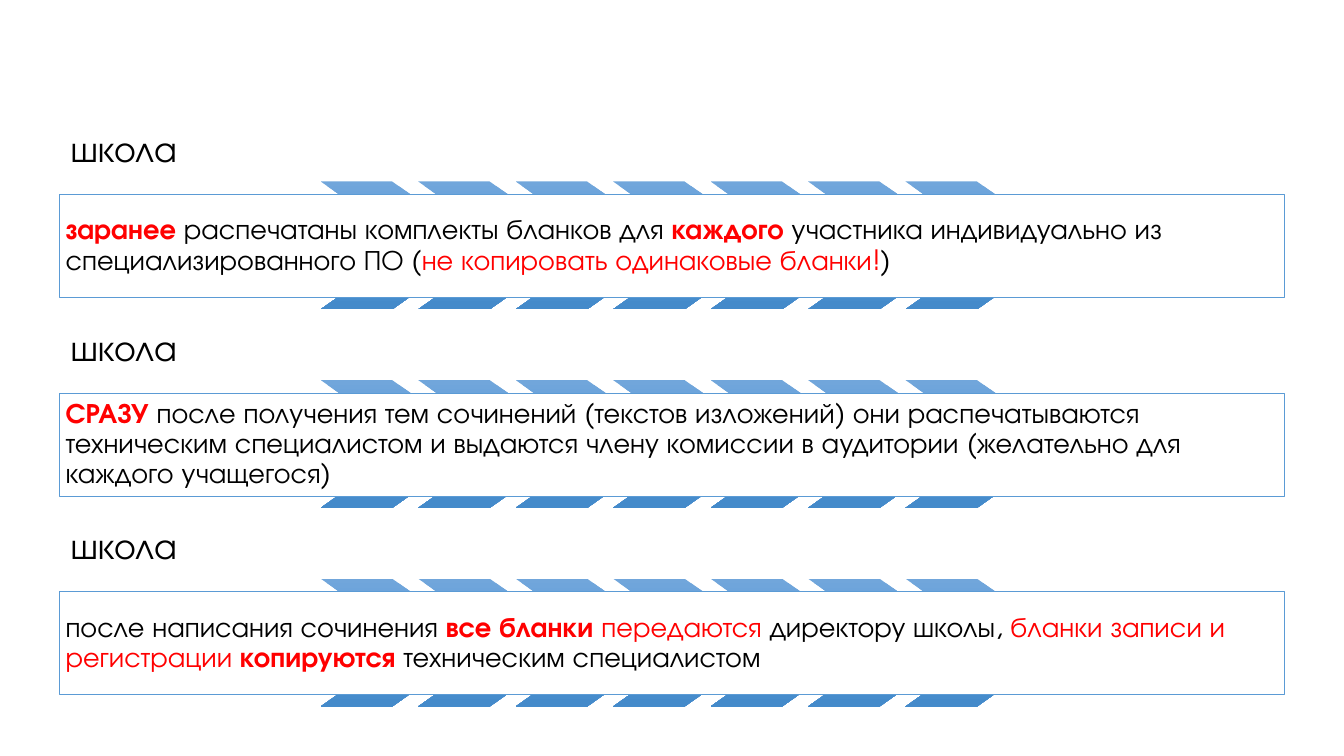
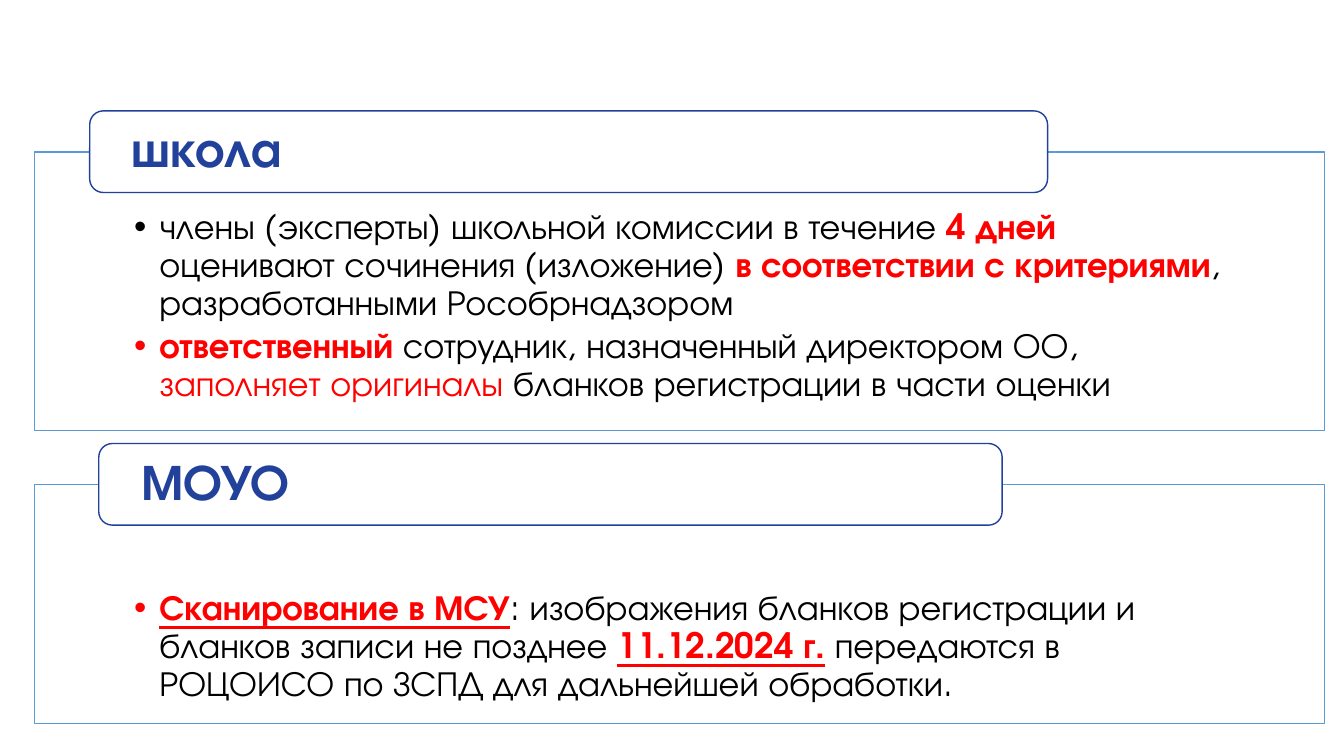
"""Build two slides on how schools handle essay forms before and after the exam."""
from copy import deepcopy

from lxml.etree import SubElement
from pptx import Presentation
from pptx.dml.color import RGBColor
from pptx.enum.shapes import MSO_SHAPE
from pptx.enum.text import MSO_ANCHOR, PP_ALIGN
from pptx.oxml.ns import qn
from pptx.util import Inches, Pt

FONT = "TeX Gyre Adventor"
BLACK = RGBColor(0x00, 0x00, 0x00)
RED = RGBColor(0xFF, 0x00, 0x00)
WHITE = RGBColor(0xFF, 0xFF, 0xFF)
NAVY = RGBColor(0x22, 0x41, 0x9B)
BORDER_BLUE = RGBColor(0x5B, 0x9B, 0xD5)
CHEVRON_BLUES = [
    RGBColor(0x71, 0xA6, 0xDB),
    RGBColor(0x55, 0x9B, 0xDB),
    RGBColor(0x44, 0x8A, 0xCA),
]

PLAIN = (BLACK, False, False)
ACCENT = (RED, False, False)
STRONG = (RED, True, False)
UNDERLINED = (RED, True, True)
HEADING = (NAVY, True, False)


def add_box(slide, kind, left, top, width, height, border, border_width):
    box = slide.shapes.add_shape(
        kind, Inches(left), Inches(top), Inches(width), Inches(height)
    )
    box.shadow.inherit = False
    box.fill.solid()
    box.fill.fore_color.rgb = WHITE
    box.line.color.rgb = border
    box.line.width = Pt(border_width)
    return box


def write_text(shape, paragraphs, size, anchor, insets, bulleted=False):
    frame = shape.text_frame
    frame.word_wrap = True
    frame.vertical_anchor = anchor
    frame.margin_left, frame.margin_top, frame.margin_right, frame.margin_bottom = (
        Inches(inset) for inset in insets
    )
    for index, pieces in enumerate(paragraphs):
        paragraph = frame.add_paragraph() if index else frame.paragraphs[0]
        if bulleted:
            properties = paragraph._p.get_or_add_pPr()
            properties.set("marL", str(Inches(0.25)))
            properties.set("indent", str(-Inches(0.25)))
            SubElement(properties, qn("a:buFont")).set("typeface", "Arial")
            SubElement(properties, qn("a:buChar")).set("char", "•")
        paragraph.alignment = PP_ALIGN.LEFT
        paragraph.line_spacing = 0.9
        if index < len(paragraphs) - 1:
            paragraph.space_after = Pt(3.75)
        for text, (color, bold, underline) in pieces:
            run = paragraph.add_run()
            run.text = text
            run.font.name = FONT
            run.font.size = Pt(size)
            run.font.color.rgb = color
            run.font.bold = bold
            run.font.underline = underline


prs = Presentation()
prs.slide_width = Inches(13.33)
prs.slide_height = Inches(7.5)
blank_layout = prs.slide_layouts[6]

steps = [
    [
        ("заранее", STRONG),
        (" распечатаны комплекты бланков для ", PLAIN),
        ("каждого", STRONG),
        (" участника индивидуально из специализированного ПО (", PLAIN),
        ("не копировать одинаковые бланки!", ACCENT),
        (")", PLAIN),
    ],
    [
        ("СРАЗУ", STRONG),
        (
            " после получения тем сочинений (текстов изложений) они распечатываются"
            " техническим специалистом и выдаются члену комиссии в аудитории"
            " (желательно для каждого учащегося)",
            PLAIN,
        ),
    ],
    [
        ("после написания сочинения ", PLAIN),
        ("все бланки ", STRONG),
        ("передаются", ACCENT),
        (" директору школы, ", PLAIN),
        ("бланки записи и регистрации ", ACCENT),
        ("копируются", STRONG),
        (" техническим специалистом", PLAIN),
    ],
]

STEP_LEFT, STEP_TOP, STEP_PITCH = 0.59, 1.17, 1.97
CHEVRON_LEFT, CHEVRON_PITCH, CHEVRON_COUNT = 3.18, 5.8 / 6, 7

steps_slide = prs.slides.add_slide(blank_layout)
for row, step in enumerate(steps):
    top = STEP_TOP + row * STEP_PITCH
    owner = steps_slide.shapes.add_textbox(
        Inches(STEP_LEFT), Inches(top), Inches(6.88), Inches(0.63)
    )
    write_text(owner, [[("школа", PLAIN)]], 26, MSO_ANCHOR.BOTTOM, [0.11] * 4)

    for column in range(CHEVRON_COUNT):
        chevron = steps_slide.shapes.add_shape(
            MSO_SHAPE.CHEVRON,
            Inches(CHEVRON_LEFT + column * CHEVRON_PITCH),
            Inches(top + 0.63),
            Inches(1.61),
            Inches(1.27),
        )
        chevron.adjustments[0] = 0.71
        chevron.shadow.inherit = False
        chevron.line.fill.background()
        chevron.fill.gradient()
        chevron.fill.gradient_angle = 270
        stop_list = chevron._element.spPr.find(".//" + qn("a:gsLst"))
        stop_list.insert(1, deepcopy(stop_list[0]))
        for stop, position, blue in zip(
            chevron.fill.gradient_stops, (0, 0.5, 1), CHEVRON_BLUES
        ):
            stop.position = position
            stop.color.rgb = blue

    instruction = add_box(
        steps_slide, MSO_SHAPE.RECTANGLE,
        STEP_LEFT, top + 0.76, 12.15, 1.02, BORDER_BLUE, 0.5,
    )
    write_text(instruction, [step], 20, MSO_ANCHOR.MIDDLE, [0.06] * 4)

school_duties = [
    [
        ("члены (эксперты) школьной комиссии в течение ", PLAIN),
        ("4 дней ", STRONG),
        ("оценивают сочинения (изложение) ", PLAIN),
        ("в соответствии с критериями", STRONG),
        (", разработанными Рособрнадзором", PLAIN),
    ],
    [
        ("ответственный ", STRONG),
        ("сотрудник, назначенный директором ОО, ", PLAIN),
        ("заполняет оригиналы ", ACCENT),
        ("бланков регистрации в части оценки", PLAIN),
    ],
]
authority_duties = [
    [
        ("Сканирование в МСУ", UNDERLINED),
        (": изображения бланков регистрации и бланков записи не позднее ", PLAIN),
        ("11.12.2024 г.", UNDERLINED),
        (" передаются в РОЦОИСО по ЗСПД для дальнейшей обработки.", PLAIN),
    ],
]
sections = [
    ("школа", 0.89, 9.5, 1.51, 2.76, 0.57, school_duties),
    ("МОУО", 0.98, 8.96, 4.81, 2.37, 1.05, authority_duties),
]

duties_slide = prs.slides.add_slide(blank_layout)
for name, tab_left, tab_width, top, height, top_inset, duties in sections:
    panel = add_box(
        duties_slide, MSO_SHAPE.RECTANGLE, 0.34, top, 12.8, height, BORDER_BLUE, 1
    )
    write_text(
        panel, duties, 25, MSO_ANCHOR.TOP, [0.99, top_inset, 0.99, 0.19], bulleted=True
    )
    tab = add_box(
        duties_slide, MSO_SHAPE.ROUNDED_RECTANGLE,
        tab_left, top - 0.41, tab_width, 0.81, NAVY, 1,
    )
    write_text(tab, [[(name, HEADING)]], 36, MSO_ANCHOR.MIDDLE, [0.38, 0, 0.38, 0])

prs.save("out.pptx")
